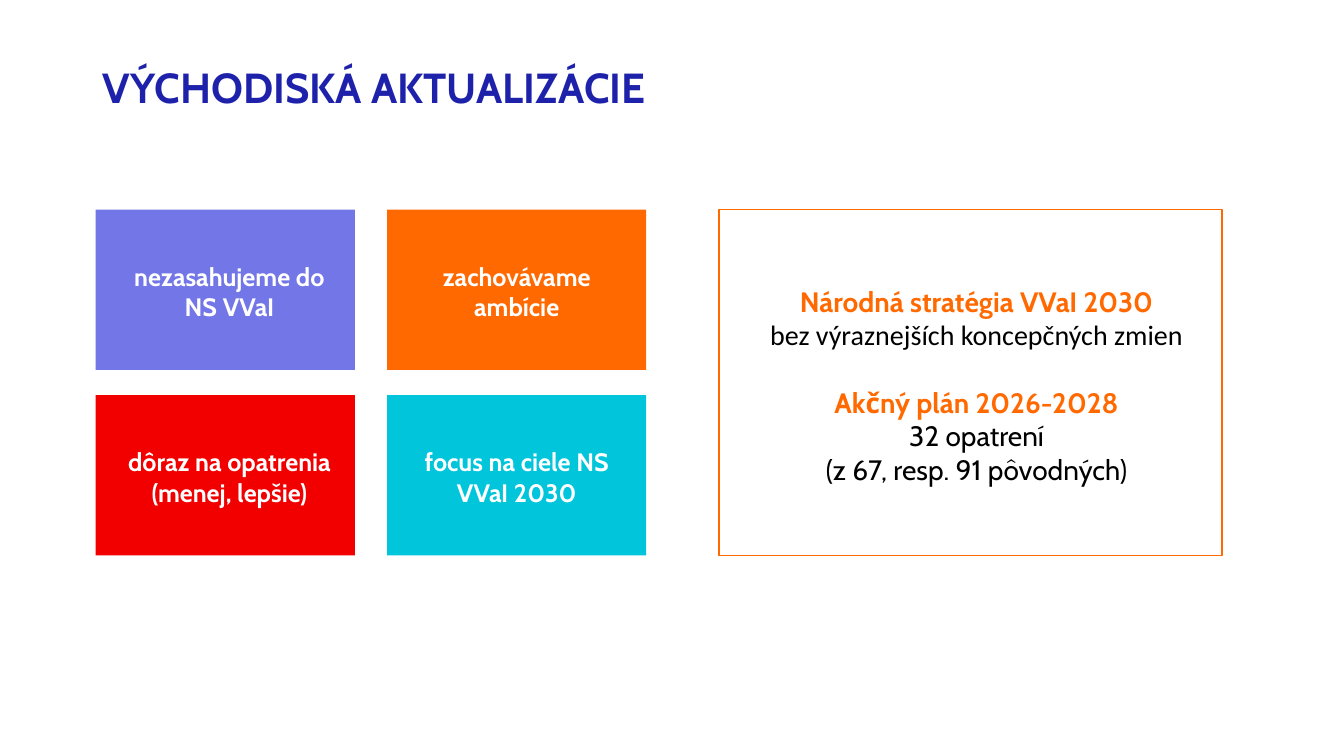
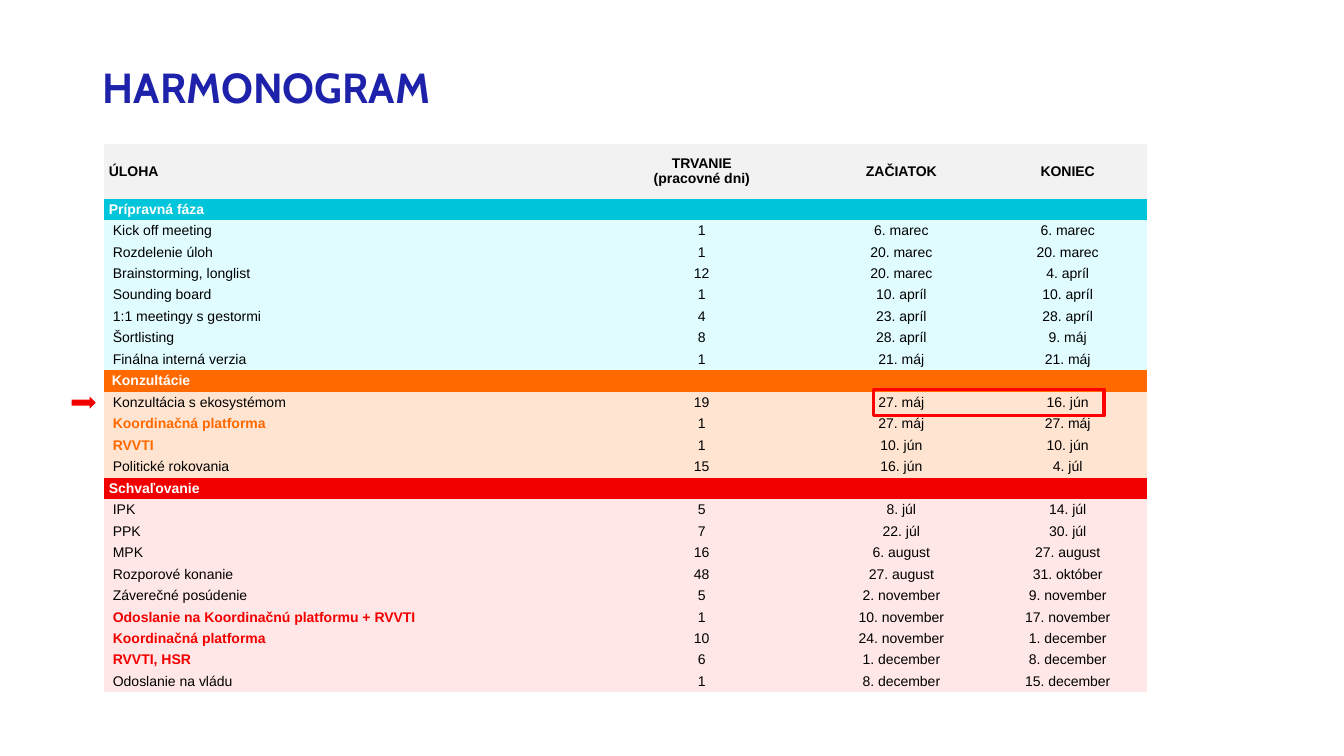
"""Build two slides: the starting points of a strategy update and its schedule."""
from pptx import Presentation
from pptx.dml.color import RGBColor
from pptx.enum.shapes import MSO_SHAPE as Shape
from pptx.enum.text import MSO_ANCHOR as Anchor, MSO_AUTO_SIZE as AutoSize, PP_ALIGN as Align
from pptx.oxml.ns import qn
from pptx.util import Inches, Pt

COLORS = {
    "navy": "1E22AA", "violet": "7376E7", "orange": "FF6900", "red": "F20000",
    "cyan": "00C5DB", "white": "FFFFFF", "black": "000000", "gray": "F2F2F2",
    "pale_cyan": "E1FCFF", "pale_orange": "FFE4D1", "pale_red": "FFE7E7",
    "bright_red": "FF0000",
}
RGB = {name: RGBColor.from_string(value) for name, value in COLORS.items()}
NO_STYLE_NO_GRID = "{2D5ABB26-0587-4C30-8999-92F81FD0307C}"


def format_paragraph(paragraph, font_name, size, color, bold, align):
    paragraph.alignment = align
    for run in paragraph.runs:
        font = run.font
        font.name, font.size, font.bold = font_name, Pt(size), bold
        font.color.rgb = RGB[color]


def add_titled_slide(heading):
    slide = prs.slides.add_slide(prs.slide_layouts[5])
    title = slide.shapes.title
    title.left, title.top = Inches(0.92), Inches(0.63)
    title.width, title.height = Inches(10.8), Inches(0.53)
    frame = title.text_frame
    frame.text = heading
    frame.auto_size = AutoSize.NONE
    frame.vertical_anchor = Anchor.MIDDLE
    frame.paragraphs[0].line_spacing = 0.9
    format_paragraph(frame.paragraphs[0], "Cabin", 30, "navy", True, Align.LEFT)
    return slide


prs = Presentation()
prs.slide_width, prs.slide_height = Inches(13.33), Inches(7.5)

basis = add_titled_slide("VÝCHODISKÁ AKTUALIZÁCIE")

principles = [
    ("nezasahujeme do\nNS VVaI", "violet"),
    ("zachovávame\nambície", "orange"),
    ("dôraz na opatrenia (menej, lepšie)", "red"),
    ("focus na ciele NS VVaI 2030", "cyan"),
]
for index, (principle, color) in enumerate(principles):
    row, column = divmod(index, 2)
    card = basis.shapes.add_shape(
        Shape.RECTANGLE, Inches(0.95 + 2.89 * column), Inches(2.08 + 1.84 * row),
        Inches(2.57), Inches(1.59))
    card.shadow.inherit = False
    card.fill.solid()
    card.fill.fore_color.rgb = RGB[color]
    card.line.fill.background()
    frame = card.text_frame
    frame.text = principle
    frame.word_wrap = True
    frame.vertical_anchor = Anchor.MIDDLE
    frame.margin_left = Inches(0.1 if column else 0.18)
    frame.margin_top = Inches(0.08)
    for paragraph in frame.paragraphs:
        format_paragraph(paragraph, "Cabin", 18, "white", True, Align.CENTER)

summary = basis.shapes.add_shape(
    Shape.RECTANGLE, Inches(7.13), Inches(2.08), Inches(4.99), Inches(3.43))
summary.shadow.inherit = False
summary.fill.background()
summary.line.color.rgb = RGB["orange"]
summary.line.width = Pt(1)
summary_lines = [
    ("Národná stratégia VVaI 2030", "Cabin", True),
    ("bez výraznejších koncepčných zmien", "Calibri", False),
    ("Akčný plán 2026-2028", "Cabin", True),
    ("32 opatrení", "Cabin", False),
    ("(z 67, resp. 91 pôvodných)", "Cabin", False),
]
frame = summary.text_frame
frame.text = "\n".join(line for line, _, _ in summary_lines)
frame.word_wrap = True
frame.vertical_anchor = Anchor.MIDDLE
frame.margin_left, frame.margin_top = Inches(0.22), Inches(0.1)
for paragraph, (_, font_name, is_heading) in zip(frame.paragraphs, summary_lines):
    color = "orange" if is_heading else "black"
    format_paragraph(paragraph, font_name, 20, color, is_heading, Align.CENTER)
frame.paragraphs[2].space_before = Pt(24)

schedule = add_titled_slide("HARMONOGRAM")

phases = [
    ("Prípravná fáza", "cyan", 0.05, [
        ("Kick off meeting", "1", "6. marec", "6. marec"),
        ("Rozdelenie úloh", "1", "20. marec", "20. marec"),
        ("Brainstorming, longlist", "12", "20. marec", "4. apríl"),
        ("Sounding board", "1", "10. apríl", "10. apríl"),
        ("1:1 meetingy s gestormi", "4", "23. apríl", "28. apríl"),
        ("Šortlisting", "8", "28. apríl", "9. máj"),
        ("Finálna interná verzia", "1", "21. máj", "21. máj"),
    ]),
    ("Konzultácie", "orange", 0.08, [
        ("Konzultácia s ekosystémom", "19", "27. máj", "16. jún"),
        ("Koordinačná platforma", "1", "27. máj", "27. máj"),
        ("RVVTI", "1", "10. jún", "10. jún"),
        ("Politické rokovania", "15", "16. jún", "4. júl"),
    ]),
    ("Schvaľovanie", "red", 0.05, [
        ("IPK", "5", "8. júl", "14. júl"),
        ("PPK", "7", "22. júl", "30. júl"),
        ("MPK", "16", "6. august", "27. august"),
        ("Rozporové konanie", "48", "27. august", "31. október"),
        ("Záverečné posúdenie", "5", "2. november", "9. november"),
        ("Odoslanie na Koordinačnú platformu + RVVTI", "1", "10. november", "17. november"),
        ("Koordinačná platforma", "10", "24. november", "1. december"),
        ("RVVTI, HSR", "6", "1. december", "8. december"),
        ("Odoslanie na vládu", "1", "8. december", "15. december"),
    ]),
]
milestones = {"Koordinačná platforma", "RVVTI", "RVVTI, HSR",
              "Odoslanie na Koordinačnú platformu + RVVTI"}

header = ("ÚLOHA", "TRVANIE\n(pracovné dni)", "ZAČIATOK", "KONIEC")
rows = [(header, "gray", 0.05, "black", True, "black", True)]
for phase, color, inset, tasks in phases:
    rows.append(((phase, "", "", ""), color, inset, "white", True, "white", True))
    for task in tasks:
        is_milestone = task[0] in milestones
        rows.append((task, f"pale_{color}", 0.09, color if is_milestone else "black",
                     is_milestone, "black", False))

table_top, header_height = Inches(1.43), Inches(0.54)
row_height = Inches(4.9) // (len(rows) - 1)
plan = schedule.shapes.add_table(
    len(rows), len(header), Inches(1.03), table_top, Inches(10.35), Inches(5.44)).table
plan.first_row = plan.horz_banding = False
plan._tbl.tblPr.find(qn("a:tableStyleId")).text = NO_STYLE_NO_GRID
for column, width in zip(plan.columns, (4.81, 2.24, 1.72, 1.58)):
    column.width = Inches(width)

for r, (texts, fill, inset, task_color, task_bold, color, bold) in enumerate(rows):
    plan.rows[r].height = row_height if r else header_height
    for c, text in enumerate(texts):
        cell = plan.cell(r, c)
        cell.fill.solid()
        cell.fill.fore_color.rgb = RGB[fill]
        cell.vertical_anchor = Anchor.MIDDLE
        cell.margin_left = Inches(0 if c else inset)
        cell.margin_right = cell.margin_top = cell.margin_bottom = 0
        cell.text_frame.text = text
        for paragraph in cell.text_frame.paragraphs:
            if c == 0:
                format_paragraph(paragraph, "Arial", 10, task_color, task_bold, Align.LEFT)
            else:
                format_paragraph(paragraph, "Arial", 10, color, bold, Align.CENTER)
            if not text:
                paragraph._p.get_or_add_endParaRPr().set("sz", "1000")

current_row = [row[0][0] for row in rows].index("Konzultácia s ekosystémom")
current_middle = table_top + header_height + row_height * (2 * current_row - 1) // 2

pointer = schedule.shapes.add_shape(
    Shape.RIGHT_ARROW, Inches(0.71), current_middle - Inches(0.06), Inches(0.24), Inches(0.12))
pointer.shadow.inherit = False
pointer.fill.solid()
pointer.fill.fore_color.rgb = RGB["red"]
pointer.line.fill.background()

date_frame = schedule.shapes.add_shape(
    Shape.RECTANGLE, Inches(8.66), current_middle - Inches(0.13), Inches(2.29), Inches(0.26))
date_frame.shadow.inherit = False
date_frame.fill.background()
date_frame.line.color.rgb = RGB["bright_red"]
date_frame.line.width = Pt(2.25)

prs.save("out.pptx")
